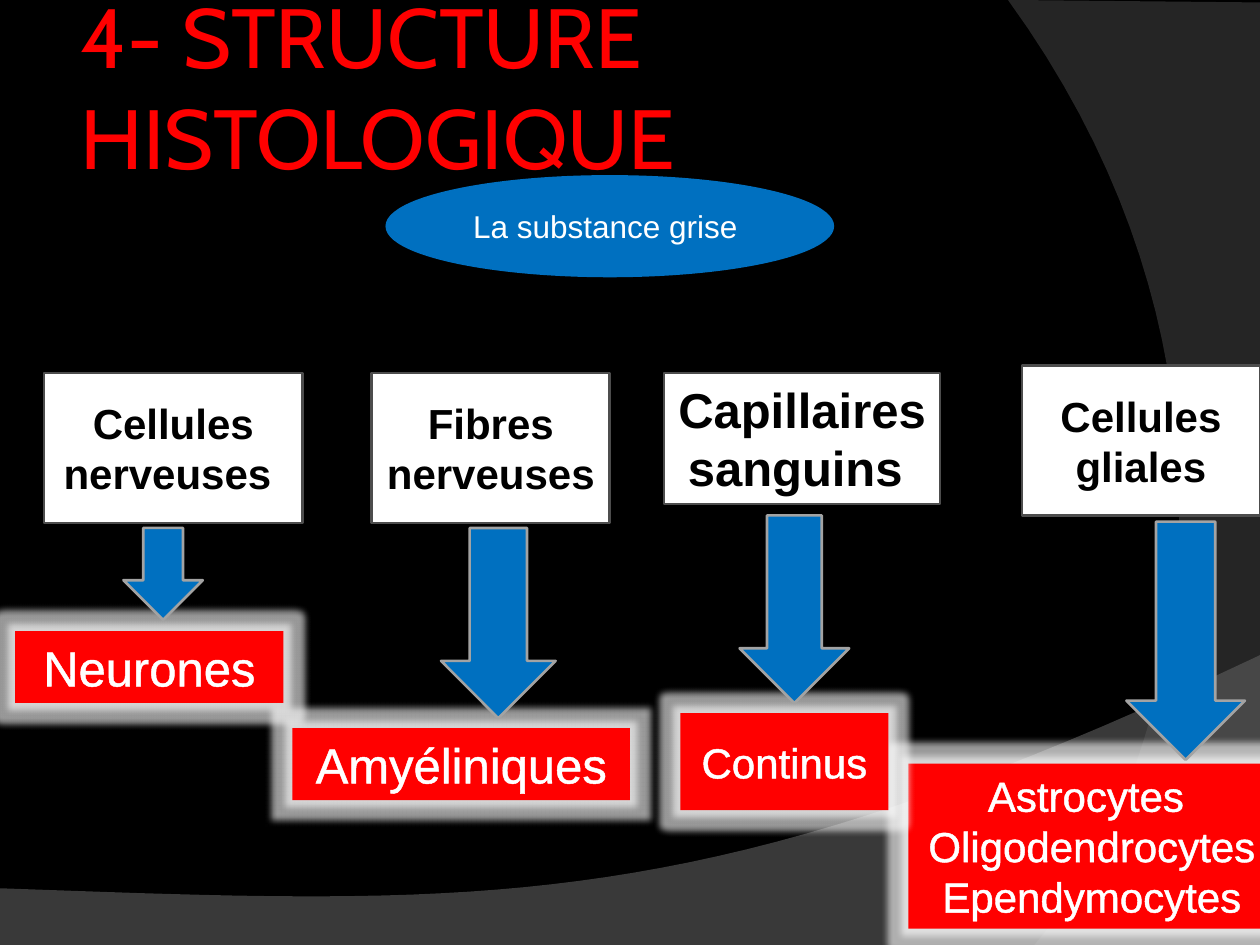
from lxml import etree
from pptx import Presentation
from pptx.dml.color import RGBColor
from pptx.enum.shapes import MSO_SHAPE
from pptx.enum.text import MSO_ANCHOR, PP_ALIGN
from pptx.oxml.ns import qn
from pptx.util import Inches, Pt

RECTANGLE, ELLIPSE, DOWN_ARROW = MSO_SHAPE.RECTANGLE, MSO_SHAPE.OVAL, MSO_SHAPE.DOWN_ARROW
TOP, MIDDLE = MSO_ANCHOR.TOP, MSO_ANCHOR.MIDDLE
LEFT, CENTER = PP_ALIGN.LEFT, PP_ALIGN.CENTER

BLACK, WHITE, RED, BLUE = "000000", "FFFFFF", "FF0000", "0070C0"
BOX_LINE, ARROW_LINE = "4D4D4D", "A3A3A3"


def color(value):
    return RGBColor.from_string(value)


def add_color_xml(parent, value, alpha=100):
    element = etree.SubElement(parent, qn("a:srgbClr"), val=value)
    etree.SubElement(element, qn("a:alpha"), val=str(alpha * 1000))


def curve(start, control_1, control_2, end, steps=40):
    """Points of a cubic Bezier curve, without its start."""
    points = []
    for step in range(1, steps + 1):
        t = step / steps
        weights = ((1 - t) ** 3, 3 * t * (1 - t) ** 2, 3 * t * t * (1 - t), t ** 3)
        corners = (start, control_1, control_2, end)
        points.append(tuple(sum(w * c[axis] for w, c in zip(weights, corners))
                            for axis in (0, 1)))
    return points


class SlideBuilder:
    font = "Arial"
    line_width = 1.5

    def __init__(self, slide):
        self.slide = slide

    def background(self, value):
        fill = self.slide.background.fill
        fill.solid()
        fill.fore_color.rgb = color(value)

    def paint(self, shape, fill, line=None):
        shape.shadow.inherit = False
        shape.fill.solid()
        shape.fill.fore_color.rgb = color(fill)
        if line:
            shape.line.color.rgb = color(line)
            shape.line.width = Pt(self.line_width)
        else:
            shape.line.fill.background()

    def sweep(self, points, fill, alpha):
        points = [(Inches(x), Inches(y)) for x, y in points]
        builder = self.slide.shapes.build_freeform(*points[0])
        builder.add_line_segments(points[1:], close=True)
        shape = builder.convert_to_shape()
        self.paint(shape, fill)
        solid_fill = shape._element.spPr.find(qn("a:solidFill"))
        solid_fill.clear()
        add_color_xml(solid_fill, fill, alpha)

    def set_text(self, shape, lines, size, text_color, bold=False, anchor=MIDDLE,
                 align=CENTER, font=None, wrap=True):
        frame = shape.text_frame
        frame.word_wrap = wrap
        frame.vertical_anchor = anchor
        frame.text = "\n".join(lines)
        for paragraph in frame.paragraphs:
            paragraph.alignment = align
            paragraph.font.name = font or self.font
            paragraph.font.size = Pt(size)
            paragraph.font.bold = bold
            paragraph.font.color.rgb = color(text_color)
        return frame

    def title(self, place, text):
        box = self.slide.shapes.add_textbox(*map(Inches, place))
        frame = self.set_text(box, [text], 48, RED, align=LEFT, font="Cabin")
        frame.margin_left = frame.margin_right = Inches(0.05)
        frame.margin_top = frame.margin_bottom = Inches(0.05)

    def shape(self, kind, place, fill, line=None):
        shape = self.slide.shapes.add_shape(kind, *map(Inches, place))
        self.paint(shape, fill, line)
        return shape

    def category(self, place, lines, size=24, anchor=MIDDLE, wrap=True):
        box = self.shape(RECTANGLE, place, WHITE, BOX_LINE)
        self.set_text(box, lines, size, BLACK, bold=True, anchor=anchor, wrap=wrap)

    def result(self, place, lines, size, anchor=TOP):
        """Red box with a white glow and outlined white text."""
        box = self.shape(RECTANGLE, place, RED)
        effects = box._element.spPr.find(qn("a:effectLst"))
        glow = etree.SubElement(effects, qn("a:glow"), rad=str(Inches(0.11)))
        add_color_xml(glow, WHITE, 60)
        frame = self.set_text(box, lines, size, WHITE, anchor=anchor)
        for paragraph in frame.paragraphs:
            properties = paragraph._p.pPr.find(qn("a:defRPr"))
            outline = etree.Element(qn("a:ln"), w=str(Pt(1.45)))
            add_color_xml(etree.SubElement(outline, qn("a:solidFill")), WHITE)
            properties.insert(0, outline)


def main():
    presentation = Presentation()
    presentation.slide_width = Inches(10)
    presentation.slide_height = Inches(7.5)
    slide = presentation.slides.add_slide(presentation.slide_layouts[6])
    builder = SlideBuilder(slide)

    # Background sweeps
    builder.background(BLACK)
    builder.sweep([(0, 7.05), (0, 7.5), (10, 7.5), (10, 5.2)]
                  + curve((10, 5.2), (5.59, 7.29), (3.91, 7.19), (0, 7.05)),
                  "7F7F7F", 45)
    builder.sweep([(10, 0.02), (10, 7.5), (8.21, 7.5)]
                  + curve((8.21, 7.5), (9.35, 6.19), (10.18, 3), (8, 0)),
                  "5E5E5E", 40)

    # Title
    builder.title((0.59, 0.13, 8.82, 1.1), "4- STRUCTURE HISTOLOGIQUE")

    # Results
    builder.result((0.12, 5.01, 2.13, 0.57), ["Neurones"], 28)
    builder.result((2.32, 5.78, 2.68, 0.57), ["Amyéliniques"], 28)
    builder.result((7.21, 6.06, 2.91, 1.31),
                   ["Astrocytes ", "Oligodendrocytes Ependymocytes"], 24)
    builder.result((5.4, 5.66, 1.65, 0.77), ["Continus"], 24, MIDDLE)

    # Subject
    subject = builder.shape(ELLIPSE, (3.07, 1.4, 3.54, 0.79), BLUE, BLUE)
    builder.set_text(subject, ["La substance grise "], 18, WHITE)

    # Categories
    builder.category((0.35, 2.96, 2.05, 1.19), ["Cellules nerveuses "])
    builder.category((2.95, 2.96, 1.89, 1.19), ["Fibres nerveuses "])
    builder.category((5.27, 2.96, 2.19, 1.04), ["Capillaires", "sanguins "],
                     size=28, anchor=TOP, wrap=False)
    builder.category((8.11, 2.9, 1.89, 1.19), ["Cellules gliales"])

    # Arrows from each category to its result
    for place in ((0.98, 4.19, 0.63, 0.73), (3.5, 4.19, 0.91, 1.51),
                  (5.87, 4.09, 0.87, 1.49), (8.94, 4.14, 0.94, 1.89)):
        builder.shape(DOWN_ARROW, place, BLUE, ARROW_LINE)

    presentation.save("out.pptx")


if __name__ == "__main__":
    main()
